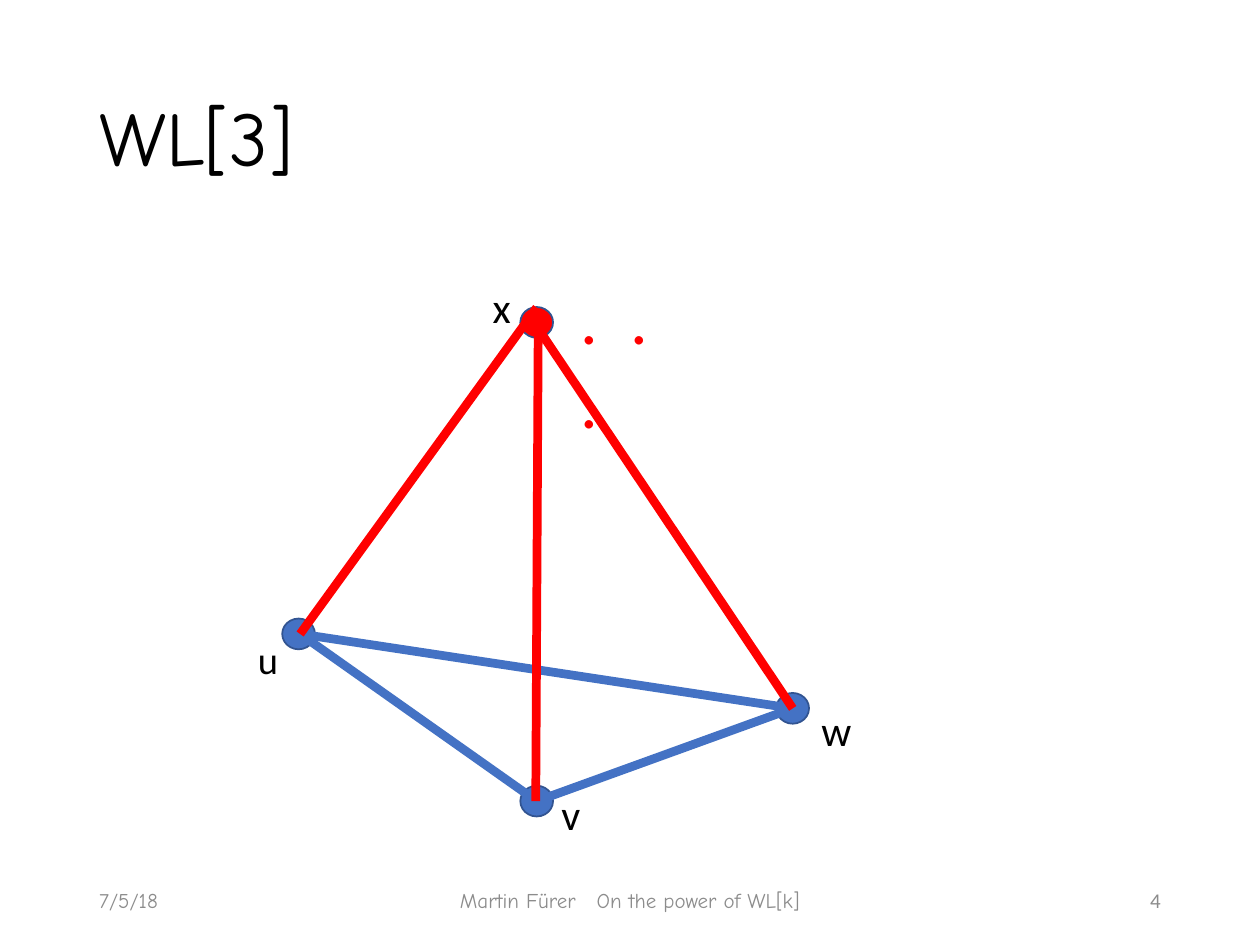
from pptx import Presentation
from pptx import util as u
from pptx.dml.color import RGBColor
from pptx.enum import shapes, text
from pptx.oxml.ns import qn
from lxml import etree

BLUE = RGBColor(0x44, 0x72, 0xC4)
EDGE = RGBColor(0x32, 0x54, 0x91)
RED = RGBColor(0xFF, 0, 0)
BLACK = RGBColor(0, 0, 0)
GREY = RGBColor(0x8C, 0x8C, 0x8C)
SANS, COMIC = "Calibri", "Comic Neue"
LEFT, MID, RIGHT = text.PP_ALIGN.LEFT, text.PP_ALIGN.CENTER, text.PP_ALIGN.RIGHT

# Content, lengths in cm
TITLE = "WL[3]"
NODES = [  # centre x, centre y, fill
    (6.02, 12.78, BLUE),
    (10.82, 16.15, BLUE),
    (15.98, 14.28, BLUE),
    (10.82, 6.5, RED),
]
U, V, W = (6.05, 12.78), (10.82, 16.15), (15.98, 14.28)
EDGES = [  # start, end, colour
    (U, W, BLUE),
    (V, W, BLUE),
    (V, U, BLUE),
    ((10.8, 6.55), W, RED),
    ((10.85, 6.58), (10.8, 16.15), RED),
    ((10.82, 6.2), U, RED),
]
LABELS = [  # text, left, top, width, height, size, colour, wrap
    ("u", 4.95, 12.7, 0.81, 0.97, 22, BLACK, False),
    ("v", 11.07, 15.77, 0.81, 1.04, 24, BLACK, False),
    ("w", 16.31, 14.07, 0.99, 1.04, 24, BLACK, True),
    ("x", 9.68, 5.56, 0.79, 1.04, 24, BLACK, False),
    (".  .  .", 11.46, 5.41, 2.57, 1.6, 40, RED, True),
]
FOOT = [  # text, left, width, alignment, font
    ("7/5/18", 1.75, 5.72, LEFT, COMIC),
    ("Martin Fürer   On the power of WL[k]", 8.41, 8.58, MID, COMIC),
    ("4", 17.93, 5.72, RIGHT, SANS),
]
DOT_W, DOT_H = 0.66, 0.62


def write(box, words, size, font, color, align=LEFT):
    frame = box.text_frame
    frame.text = words
    par = frame.paragraphs[0]
    par.alignment = align
    face = par.runs[0].font
    face.size, face.name = u.Pt(size), font
    face.color.rgb = color
    return frame


def place(x, y, wide, high):
    return [u.Cm(n) for n in (x, y, wide, high)]


def add_node(group, x, y, fill):
    dot = group.shapes.add_shape(
        shapes.MSO_SHAPE.OVAL,
        *place(x - DOT_W / 2, y - DOT_H / 2, DOT_W, DOT_H))
    dot.shadow.inherit = False
    dot.fill.solid()
    dot.fill.fore_color.rgb = fill
    dot.line.color.rgb = EDGE
    dot.line.width = u.Pt(1)


def add_edge(group, start, end, color):
    edge = group.shapes.add_connector(
        shapes.MSO_CONNECTOR.STRAIGHT, *place(*start, *end))
    edge.line.color.rgb = color
    edge.line.width = u.Pt(5)
    etree.SubElement(edge._element.spPr, qn("a:effectLst"))


def main():
    deck = Presentation()
    deck.slide_width, deck.slide_height = u.Cm(25.4), u.Cm(19.05)
    slide = deck.slides.add_slide(deck.slide_layouts[5])

    # Title
    head = slide.shapes.title
    head.left, head.top, head.width, head.height = place(1.75, 1.01, 21.9, 3.68)
    frame = write(head, TITLE, 44, COMIC, BLACK)
    frame.vertical_anchor = text.MSO_ANCHOR.MIDDLE
    frame.paragraphs[0].line_spacing = 0.9

    # Graph: nodes, edges, labels
    graph = slide.shapes.add_group_shape()
    for node in NODES:
        add_node(graph, *node)
    for edge in EDGES:
        add_edge(graph, *edge)
    for words, x, y, wide, high, size, color, wrap in LABELS:
        box = graph.shapes.add_textbox(*place(x, y, wide, high))
        write(box, words, size, SANS, color).word_wrap = wrap

    # Footer
    for words, x, wide, align, font in FOOT:
        box = slide.shapes.add_textbox(*place(x, 17.65, wide, 1.01))
        frame = write(box, words, 12, font, GREY, align)
        frame.word_wrap = True
        frame.vertical_anchor = text.MSO_ANCHOR.MIDDLE

    deck.save("out.pptx")


if __name__ == "__main__":
    main()
